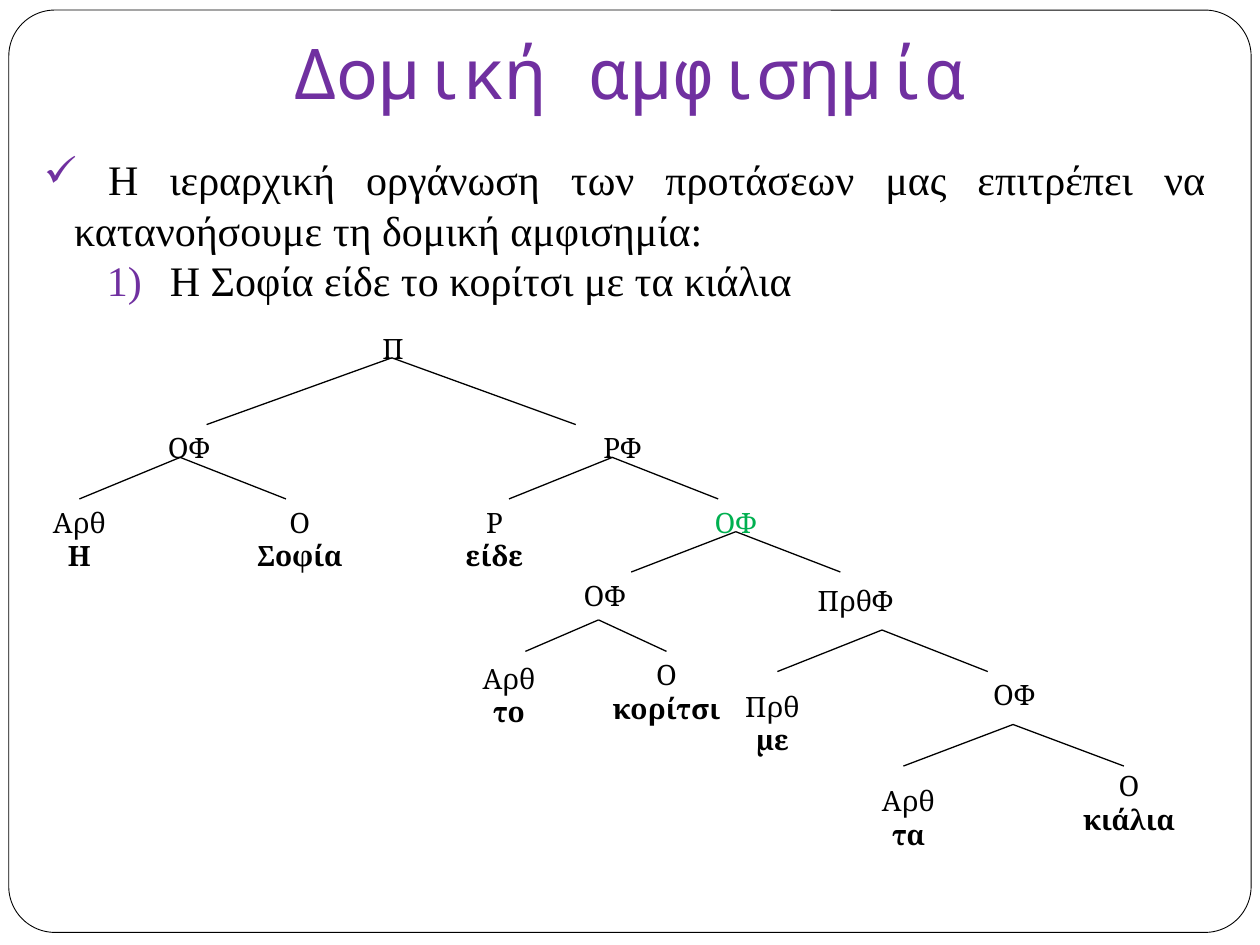
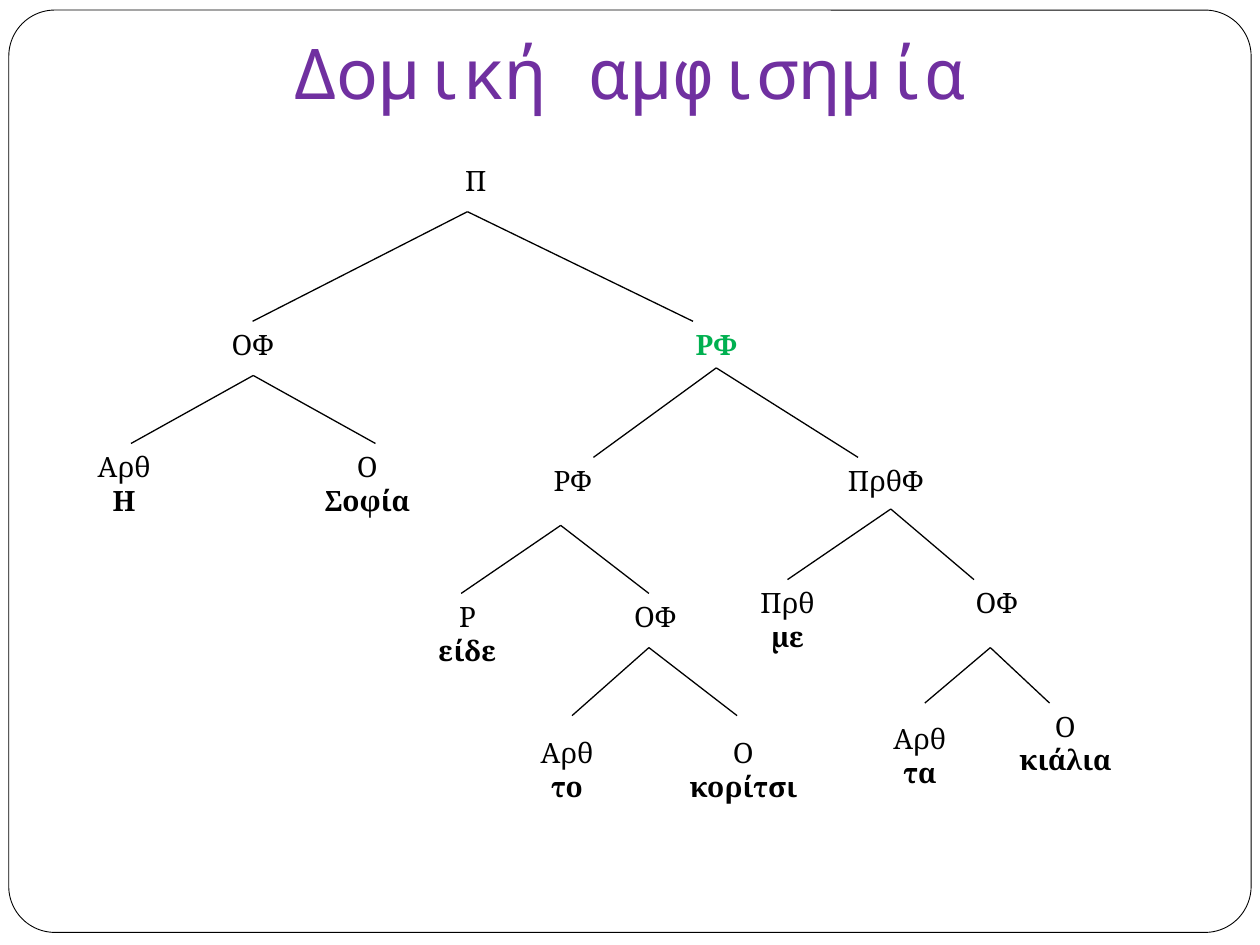
import math
from dataclasses import dataclass

import pptx
import pptx.util
import pptx.dml.color
import pptx.enum.shapes
import pptx.enum.text
import pptx.oxml.ns
from lxml import etree

BLACK = pptx.dml.color.RGBColor(0x00, 0x00, 0x00)
WHITE = pptx.dml.color.RGBColor(0xFF, 0xFF, 0xFF)
PURPLE = pptx.dml.color.RGBColor(0x70, 0x30, 0xA0)
GREEN = pptx.dml.color.RGBColor(0x00, 0xB0, 0x50)

TITLE_FONT, BODY_FONT, TREE_FONT = "Noto Sans Mono", "Times New Roman", "Cambria"
TITLE = "Δομική αμφισημία"
TITLE_ONLY = 5
CELL = pptx.util.Inches(0.1)  # the slide is a grid of 100 columns and 75 rows
COLUMNS, ROWS = 100, 75
LINE_ROWS, INSET_ROWS = 2.7, 0.5  # height of a label line, and its margin
JOIN_REACH = 0.45  # a branch this near a label's side is glued to it
TOP, BOTTOM = 0, 2
CENTER = pptx.enum.text.PP_ALIGN.CENTER


@dataclass
class Box:
    """A region of the slide, in grid cells."""
    column: float
    row: float
    columns: float
    rows: float

    def inner(self, column, row, columns, rows):
        return Box(self.column + column, self.row + row, columns, rows)

    def emu(self):
        return [round(cells * CELL) for cells in (self.column, self.row, self.columns, self.rows)]


@dataclass
class Node:
    """A label of the tree: category, the word below it, and its place."""
    category: str
    column: float
    row: float
    columns: float
    word: str = ""
    color: pptx.dml.color.RGBColor = BLACK
    bold: bool = False

    def rows(self):
        return 2 * INSET_ROWS + LINE_ROWS * (2 if self.word else 1)

    def side(self, site):
        row = self.row + (self.rows() if site == BOTTOM else 0)
        return self.column + self.columns / 2, row


@dataclass
class Fork:
    """Two branches from one apex down to a left and a right foot."""
    apex: tuple
    left_foot: float
    right_foot: float
    foot_row: float


def style(paragraph, font, size, color, bold=False, align=CENTER):
    paragraph.alignment = align
    paragraph.font.name = font
    paragraph.font.size = pptx.util.Pt(size)
    paragraph.font.color.rgb = color
    paragraph.font.bold = bold


def add_text_frame(page, box):
    frame = page.shapes.add_textbox(*box.emu())
    frame.text_frame.word_wrap = True
    frame.text_frame.auto_size = pptx.enum.text.MSO_AUTO_SIZE.SHAPE_TO_FIT_TEXT
    return frame


def add_page(deck):
    """Shared look: rounded frame behind a purple title."""
    page = deck.slides.add_slide(deck.slide_layouts[TITLE_ONLY])
    title = page.shapes.title

    border = page.shapes.add_shape(
        pptx.enum.shapes.MSO_SHAPE.ROUNDED_RECTANGLE, *Box(0.7, 0.8, 98.6, 73.2).emu())
    border.adjustments[0] = 0.05
    border.shadow.inherit = False
    border.fill.solid()
    border.fill.fore_color.rgb = WHITE
    border.line.color.rgb = BLACK
    border.line.width = pptx.util.Pt(0.5)
    title.element.addprevious(border.element)

    title.left, title.top, title.width, title.height = Box(7.5, -2.5, 85, 12.5).emu()
    text = title.text_frame
    text.text = TITLE
    text.auto_size = pptx.enum.text.MSO_AUTO_SIZE.NONE
    text.vertical_anchor = pptx.enum.text.MSO_ANCHOR.BOTTOM
    text.margin_bottom = CELL
    style(text.paragraphs[0], TITLE_FONT, 40, PURPLE)
    return page


def add_bullet(paragraph, tag, margin, hang, **attributes):
    properties = paragraph._p.get_or_add_pPr()
    properties.set("marL", str(round(margin * CELL)))
    properties.set("indent", str(round(-hang * CELL)))
    name = pptx.oxml.ns.qn
    color = etree.SubElement(properties, name("a:buClr"))
    etree.SubElement(color, name("a:srgbClr"), val=str(PURPLE))
    etree.SubElement(properties, name(tag), **attributes)


def add_statement(page, box, claim, example):
    """A ticked claim with a numbered example below it."""
    text = add_text_frame(page, box).text_frame
    first, second = text.paragraphs[0], text.add_paragraph()
    first.text, second.text = claim, example
    second.level = 1
    add_bullet(first, "a:buChar", 2.4, 2.4, char="✓")
    add_bullet(second, "a:buAutoNum", 10, 5, type="arabicParenR")
    for paragraph in text.paragraphs:
        style(paragraph, BODY_FONT, 24, BLACK, align=pptx.enum.text.PP_ALIGN.JUSTIFY)


def add_label(page, area, node):
    frame = add_text_frame(page, area.inner(node.column, node.row, node.columns, node.rows()))
    first = frame.text_frame.paragraphs[0]
    first.text = node.category
    style(first, TREE_FONT, 16, node.color, node.bold)
    if node.word:
        second = frame.text_frame.add_paragraph()
        second.text = node.word
        style(second, TREE_FONT, 16, BLACK, bold=True)
    return frame


def find_label(labels, point, site):
    """The label whose top or bottom middle lies at the point, if any."""
    for node, frame in labels:
        if math.dist(node.side(site), point) <= JOIN_REACH:
            return frame
    return None


def add_branch(page, area, labels, apex, foot):
    start, end = (area.inner(*point, 0, 0).emu()[:2] for point in (apex, foot))
    branch = page.shapes.add_connector(
        pptx.enum.shapes.MSO_CONNECTOR.STRAIGHT, *start, *end)
    branch.line.color.rgb = BLACK
    branch.line.width = pptx.util.Pt(0.75)
    etree.SubElement(branch.element.spPr, pptx.oxml.ns.qn("a:effectLst"))
    parent = find_label(labels, apex, BOTTOM)
    child = find_label(labels, foot, TOP)
    if parent is not None:
        branch.begin_connect(parent, BOTTOM)
    if child is not None:
        branch.end_connect(child, TOP)


def add_tree(page, area, nodes, forks):
    """Labels and branches, placed from the area's top left corner."""
    labels = [(node, add_label(page, area, node)) for node in nodes]
    for fork in forks:
        for foot in (fork.left_foot, fork.right_foot):
            add_branch(page, area, labels, fork.apex, (foot, fork.foot_row))


# Reading 1: the phrase with the binoculars belongs to the girl
NOUN_READING_NODES = [
    Node("Π", 28, 0.8, 6.4),
    Node("ΟΦ", 11.2, 8.7, 7.6),
    Node("ΡΦ", 45.6, 8.7, 7.6),
    Node("Αρθ", 0, 14.6, 12.6, "Η"),
    Node("Ο", 17.5, 14.6, 12.6, "Σοφία"),
    Node("Ρ", 31.4, 14.6, 15.7, "είδε"),
    Node("ΟΦ", 54.6, 14.6, 7.6, color=GREEN),
    Node("ΟΦ", 41.7, 20.4, 12.6),
    Node("ΠρθΦ", 63.3, 20.8, 9.2),
    Node("Αρθ", 35.8, 27, 9.2, "το"),
    Node("Ο", 46.6, 26.7, 12.6, "κορίτσι"),
    Node("Πρθ", 55, 29.2, 12.6, "με"),
    Node("ΟΦ", 76.7, 28.3, 7.6),
    Node("Αρθ", 65.8, 36.7, 12.6, "τα"),
    Node("Ο", 83.3, 35.5, 12.6, "κιάλια"),
]
NOUN_READING_FORKS = [
    Fork((31.1, 3.4), 16.4, 45.7, 8.7),
    Fork((14.3, 11.3), 6, 22.7, 14.6),
    Fork((48.6, 11.3), 40.4, 57, 14.6),
    Fork((58.4, 17.2), 50.1, 66.7, 20.4),
    Fork((47.5, 24.2), 41.7, 52.9, 26.7),
    Fork((70, 25), 61.7, 78.4, 28.3),
    Fork((80.4, 32.5), 71.7, 89.2, 35.8),
]

# Reading 2: the phrase with the binoculars belongs to the seeing
VERB_READING_NODES = [
    Node("Π", 34, 0.5, 7.5),
    Node("ΟΦ", 15.6, 13.5, 8.9),
    Node("ΡΦ", 52.4, 13.5, 8.9, color=GREEN, bold=True),
    Node("Αρθ", 2.5, 23.2, 14.7, "Η"),
    Node("Ο", 21.8, 23.2, 14.7, "Σοφία"),
    Node("ΡΦ", 41, 24.3, 8.9),
    Node("ΠρθΦ", 61.1, 24.3, 18.4),
    Node("Ρ", 27.9, 35.1, 18.4, "είδε"),
    Node("ΟΦ", 42.8, 35.1, 18.4),
    Node("Πρθ", 53.3, 34, 18.4, "με"),
    Node("ΟΦ", 69.9, 34, 18.4),
    Node("Αρθ", 35.8, 45.9, 18.4, "το"),
    Node("Ο", 49.8, 45.9, 18.4, "κορίτσι"),
    Node("Αρθ", 63.8, 44.8, 18.4, "τα"),
    Node("Ο", 78.3, 43.8, 12.5, "κιάλια"),
]
VERB_READING_FORKS = [
    Fork((37.1, 4.8), 20, 55, 13.5),
    Fork((20.1, 17.8), 10.4, 29.8, 23.2),
    Fork((56.8, 17.2), 47.1, 68.1, 24.3),
    Fork((44.5, 29.7), 36.6, 51.5, 35.1),
    Fork((70.7, 28.4), 62.9, 77.3, 34),
    Fork((51.5, 39.4), 45.4, 58.5, 44.8),
    Fork((78.6, 39.4), 73.4, 83.3, 43.8),
]


def main():
    deck = pptx.Presentation()
    deck.slide_width, deck.slide_height = COLUMNS * CELL, ROWS * CELL

    page = add_page(deck)
    add_statement(
        page, Box(2.5, 11.7, 94.2, 13.1),
        " Η ιεραρχική οργάνωση των προτάσεων μας επιτρέπει να "
        "κατανοήσουμε τη δομική αμφισημία:",
        "Η Σοφία είδε το κορίτσι με τα κιάλια")
    add_tree(page, Box(0, 25, COLUMNS, 45), NOUN_READING_NODES, NOUN_READING_FORKS)

    page = add_page(deck)
    add_tree(page, Box(0, 12, COLUMNS, 55), VERB_READING_NODES, VERB_READING_FORKS)

    deck.save("out.pptx")


if __name__ == "__main__":
    main()
